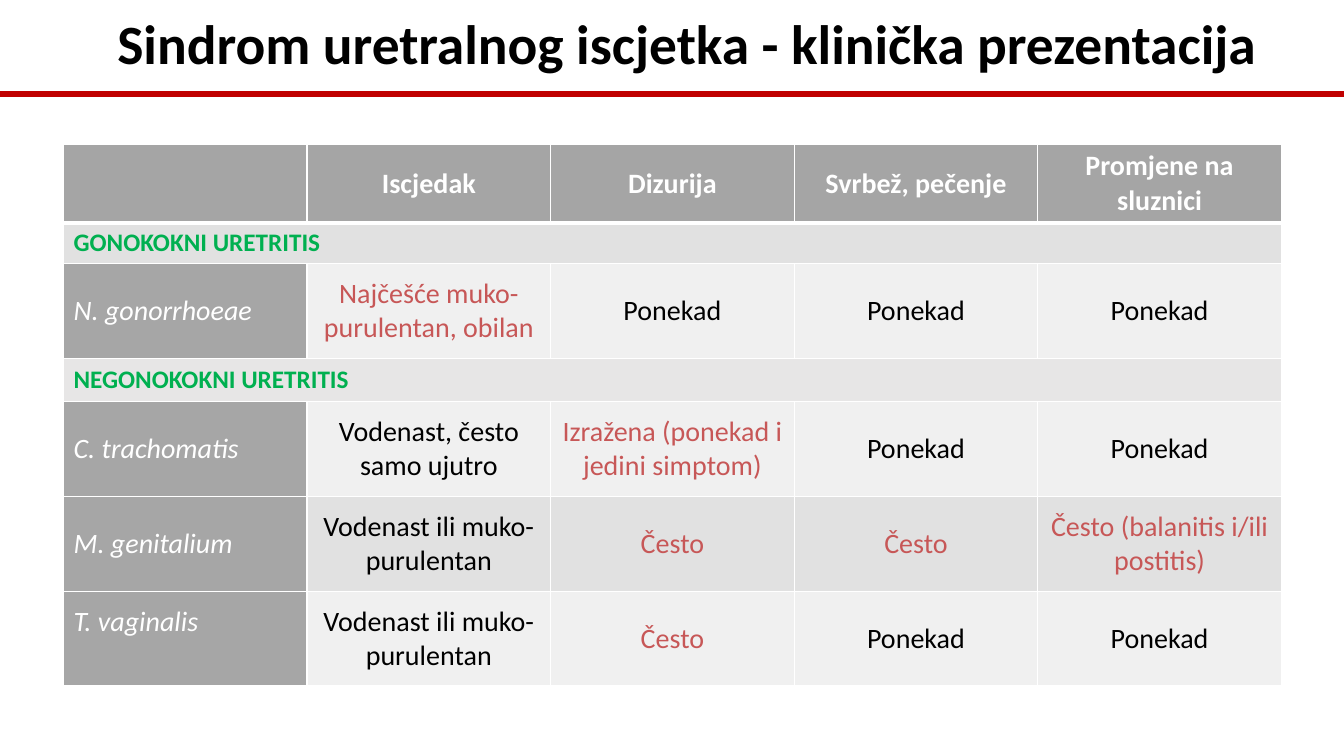
import pptx
import pptx.util
import pptx.dml.color
import pptx.enum.text
import pptx.enum.shapes
from lxml import etree
from pptx.oxml.ns import qn

Inches, Pt = pptx.util.Inches, pptx.util.Pt
RGB = pptx.dml.color.RGBColor.from_string
ALIGN = pptx.enum.text.PP_ALIGN
MIDDLE = pptx.enum.text.MSO_ANCHOR.MIDDLE
COLORS = {"black": "000000", "white": "FFFFFF", "rule": "C00000", "header": "A5A5A5",
          "label": "A6A6A6", "light": "F0F0F0", "band": "E1E1E1", "group": "E7E6E6",
          "green": "00B050", "red": "C75757"}


def write(tf, text, color, align, **font):
    p = tf.paragraphs[0]
    p.alignment = align
    r = p.add_run()
    r.text = text
    r.font.color.rgb = RGB(COLORS[color])
    for name, value in {"name": "Calibri", "bold": False, "italic": False, **font}.items():
        setattr(r.font, name, value)
    return p


def set_borders(cell, widths):
    tcPr = cell._tc.get_or_add_tcPr()
    for i, (side, width) in enumerate(widths.items()):
        ln = etree.Element(qn("a:" + side), w=str(Pt(width)))
        fill = etree.SubElement(ln, qn("a:solidFill"))
        etree.SubElement(fill, qn("a:srgbClr"), val=COLORS["white"])
        tcPr.insert(i, ln)


prs = pptx.Presentation()
prs.slide_width, prs.slide_height = Inches(13.33), Inches(7.5)
s = prs.slides.add_slide(prs.slide_layouts[5])

title = s.shapes.title
title.left, title.top, title.width, title.height = map(Inches, (0.92, 0.17, 11.79, 0.58))
tf = title.text_frame
tf.auto_size = pptx.enum.text.MSO_AUTO_SIZE.NONE
tf.vertical_anchor = MIDDLE
p = write(tf, "Sindrom uretralnog iscjetka - klinička prezentacija", "black",
          ALIGN.CENTER, size=Pt(39.6), bold=True)
p.line_spacing = 0.9

rule = s.shapes.add_connector(pptx.enum.shapes.MSO_CONNECTOR.STRAIGHT,
                              0, Inches(0.93), prs.slide_width, Inches(0.93))
rule.line.color.rgb = RGB(COLORS["rule"])
rule.line.width = Pt(4.5)
etree.SubElement(rule._element.spPr, qn("a:effectLst"))

rows = [
    ["", "Iscjedak", "Dizurija", "Svrbež, pečenje", "Promjene na sluznici"],
    ["GONOKOKNI URETRITIS"],
    ["N. gonorrhoeae", "Najčešće muko-purulentan, obilan", "Ponekad", "Ponekad", "Ponekad"],
    ["NEGONOKOKNI URETRITIS"],
    ["C. trachomatis", "Vodenast, često samo ujutro", "Izražena (ponekad i jedini simptom)",
     "Ponekad", "Ponekad"],
    ["M. genitalium", "Vodenast ili muko-purulentan", "Često", "Često",
     "Često (balanitis i/ili postitis)"],
    ["T. vaginalis", "Vodenast ili muko-purulentan", "Često", "Ponekad", "Ponekad"],
]
row_fills = ["header", "band", "light", "group", "light", "band", "light"]
row_heights = [0.77, 0.39, 0.94, 0.43, 0.94, 0.94, 0.94]
highlights = {(2, 1), (4, 2), (5, 2), (5, 3), (5, 4), (6, 2)}

table = s.shapes.add_table(7, 5, Inches(0.63), Inches(1.43), Inches(12.08), Inches(5.35)).table
for col in table.columns:
    col.width = Inches(2.416)
for i, (texts, height) in enumerate(zip(rows, row_heights)):
    table.rows[i].height = Inches(height)
    is_group = len(texts) == 1
    if is_group:
        table.cell(i, 0).merge(table.cell(i, 4))
    for j in range(5):
        cell = table.cell(i, j)
        is_label = j == 0 and i > 0 and not is_group
        cell.fill.solid()
        cell.fill.fore_color.rgb = RGB(COLORS["label" if is_label else row_fills[i]])
        set_borders(cell, {"lnL": 1, "lnR": 1, "lnT": 3 if i == 1 else 1, "lnB": 3 if i == 0 else 1})
        if j >= len(texts) or not texts[j]:
            continue
        cell.vertical_anchor = MIDDLE
        if is_group:
            style = {"color": "green", "size": Pt(18), "bold": True}
        elif i == 0:
            style = {"color": "white", "size": Pt(20), "bold": True}
        elif is_label:
            style = {"color": "white", "size": Pt(20), "italic": True}
        else:
            style = {"color": "red" if (i, j) in highlights else "black", "size": Pt(20)}
        write(cell.text_frame, texts[j], align=ALIGN.LEFT if j == 0 else ALIGN.CENTER, **style)
table.cell(6, 0).margin_bottom = Inches(0.39)

prs.save("out.pptx")
